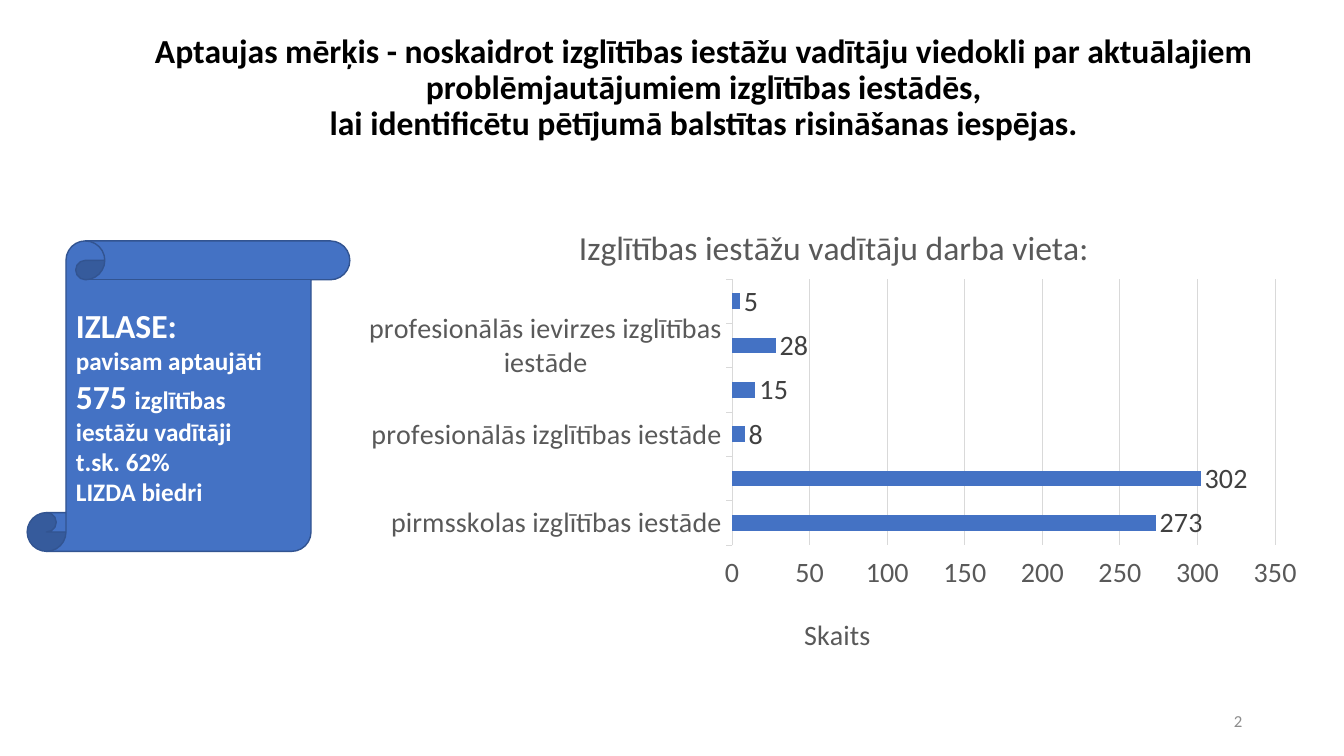
from lxml import etree
from pptx import Presentation
from pptx.chart.data import CategoryChartData
from pptx.dml.color import RGBColor
from pptx.enum.chart import XL_CHART_TYPE, XL_LABEL_POSITION, XL_TICK_MARK
from pptx.enum.shapes import MSO_SHAPE
from pptx.enum.text import MSO_ANCHOR, PP_ALIGN
from pptx.oxml.ns import qn
from pptx.util import Inches, Pt

BAR = XL_CHART_TYPE.BAR_CLUSTERED
OUTSIDE_END = XL_LABEL_POSITION.OUTSIDE_END
TICK_OUT, TICK_NONE = XL_TICK_MARK.OUTSIDE, XL_TICK_MARK.NONE
SCROLL = MSO_SHAPE.VERTICAL_SCROLL
MIDDLE = MSO_ANCHOR.MIDDLE
LEFT, CENTER, RIGHT = PP_ALIGN.LEFT, PP_ALIGN.CENTER, PP_ALIGN.RIGHT

# Content
FONT = "Calibri"
COLORS = {"black": "000000", "white": "FFFFFF", "blue": "4472C4", "edge": "325491",
          "grid": "D9D9D9", "axis": "595959", "label": "404040", "number": "8C8C8C"}
HEADING = [[("Aptaujas mērķis - noskaidrot izglītības iestāžu vadītāju viedokli par "
             "aktuālajiem problēmjautājumiem izglītības iestādēs,\v"
             "lai identificētu pētījumā balstītas risināšanas iespējas.", 24)]]
SAMPLE = [
    [("IZLASE:", 24)],
    [("pavisam aptaujāti ", 18), ("575 ", 24), ("izglītības iestāžu vadītāji", 18)],
    [("t.sk. 62%", 18)],
    [("LIZDA biedri", 18)],
]
PAGE_NUMBER = [[("2", 12)]]
CHART_TITLE = "Izglītības iestāžu vadītāju darba vieta:"
AXIS_TITLE = "Skaits"
WORKPLACES = [
    ("pirmsskolas izglītības iestāde", 273),
    ("vispārējās izglītības iestāde", 302),
    ("profesionālās izglītības iestāde", 8),
    ("interešu izglītības iestāde", 15),
    ("profesionālās ievirzes izglītības iestāde", 28),
    ("speciālās izglītības iestāde", 5),
]

# Places in inches: left, top, width, height
HEADING_BOX = (0.77, 0.63, 12.42, 0.5)
NUMBER_BOX = (9.42, 6.95, 3, 0.4)
CHART_BOX = (3.47, 2.03, 9.6, 4.59)
SCROLL_BOX = (0.27, 2.39, 3.2, 3.08)
PLOT_BOX = (7.26, 2.77, 5.39, 2.64)
AXIS_TITLE_AT = (7.92, 6.05)


def rgb(name):
    return RGBColor.from_string(COLORS[name])


def style_font(font, size, color, bold=False):
    for key, value in {"name": FONT, "size": Pt(size), "bold": bold}.items():
        setattr(font, key, value)
    font.color.rgb = rgb(color)


def write(s, paragraphs, color, align, bold=False, spacing=1.0):
    tf = s.text_frame
    tf.word_wrap = True
    tf.vertical_anchor = MIDDLE
    for i, runs in enumerate(paragraphs):
        p = tf.paragraphs[0] if i == 0 else tf.add_paragraph()
        p.alignment, p.line_spacing = align, spacing
        for j, part in enumerate(runs):
            text, size = part
            for k, line in enumerate(text.split("\v")):
                if k:
                    p.add_line_break()
                r = p.add_run()
                r.text = line
                style_font(r.font, size, color, bold)


def add_title(owner, text, size):
    tf = owner.text_frame
    tf.text = text
    style_font(tf.paragraphs[0].runs[0].font, size, "axis")


def place(parent, box, inner=False):
    """Fix a chart part at slide inches, stored as fractions of the chart."""
    layout = parent.find(qn("c:layout"))
    if layout is None:
        layout = etree.Element(qn("c:layout"))
        before = parent.find(qn("c:tx"))
        parent.insert(0 if before is None else parent.index(before) + 1, layout)
    for child in list(layout):
        layout.remove(child)
    manual = etree.SubElement(layout, qn("c:manualLayout"))
    values = [("layoutTarget", "inner")] if inner else []
    values += [("xMode", "edge"), ("yMode", "edge")]
    left, top, width, height = CHART_BOX
    fractions = [(box[0] - left) / width, (box[1] - top) / height]
    fractions += [size / whole for size, whole in zip(box[2:], (width, height))]
    values += [(key, f"{f:.3f}") for key, f in zip("xywh", fractions)]
    for tag, value in values:
        etree.SubElement(manual, qn("c:" + tag)).set("val", value)


def add_workplace_chart(slide):
    data = CategoryChartData()
    data.categories = [name for name, _ in WORKPLACES]
    data.add_series("Series 1", [count for _, count in WORKPLACES])
    chart = slide.shapes.add_chart(BAR, *map(Inches, CHART_BOX), data).chart
    chart.has_legend = False
    style_font(chart.font, 20, "black")
    add_title(chart.chart_title, CHART_TITLE, 24)
    chart.chart_title.include_in_layout = False

    # Bars and value labels
    plot = chart.plots[0]
    plot.gap_width = 182
    plot.vary_by_categories = False
    fill = plot.series[0].format.fill
    fill.solid()
    fill.fore_color.rgb = rgb("blue")
    plot.has_data_labels = True
    labels = plot.data_labels
    labels.show_value = True
    labels.position = OUTSIDE_END
    style_font(labels.font, 20, "label")

    # Axes
    cat, val = chart.category_axis, chart.value_axis
    for axis in (cat, val):
        axis.major_tick_mark, axis.minor_tick_mark = TICK_OUT, TICK_NONE
        style_font(axis.tick_labels.font, 20, "axis")
    cat.has_major_gridlines = False
    val.has_major_gridlines = True
    for line in (cat.format.line, val.major_gridlines.format.line):
        line.color.rgb = rgb("grid")
        line.width = Pt(0.75)
    val.format.line.fill.background()
    val.minimum_scale, val.maximum_scale, val.major_unit = 0, 350, 50
    add_title(val.axis_title, AXIS_TITLE, 20)

    # Plot and axis title positions
    plot_area = chart.element.find(".//" + qn("c:plotArea"))
    place(plot_area, PLOT_BOX, inner=True)
    place(plot_area.find(qn("c:valAx")).find(qn("c:title")), AXIS_TITLE_AT)


def main():
    prs = Presentation()
    prs.slide_width, prs.slide_height = Inches(13.33), Inches(7.5)
    slide = prs.slides.add_slide(prs.slide_layouts[6])

    # Heading and page number
    s = slide.shapes.add_textbox(*map(Inches, HEADING_BOX))
    write(s, HEADING, "black", CENTER, bold=True, spacing=0.9)
    s = slide.shapes.add_textbox(*map(Inches, NUMBER_BOX))
    write(s, PAGE_NUMBER, "number", RIGHT)

    add_workplace_chart(slide)

    # Scroll with the sample
    s = slide.shapes.add_shape(SCROLL, *map(Inches, SCROLL_BOX))
    s.shadow.inherit = False
    s.fill.solid()
    s.fill.fore_color.rgb = rgb("blue")
    s.line.color.rgb = rgb("edge")
    s.line.width = Pt(1)
    write(s, SAMPLE, "white", LEFT, bold=True)

    prs.save("out.pptx")


if __name__ == "__main__":
    main()
